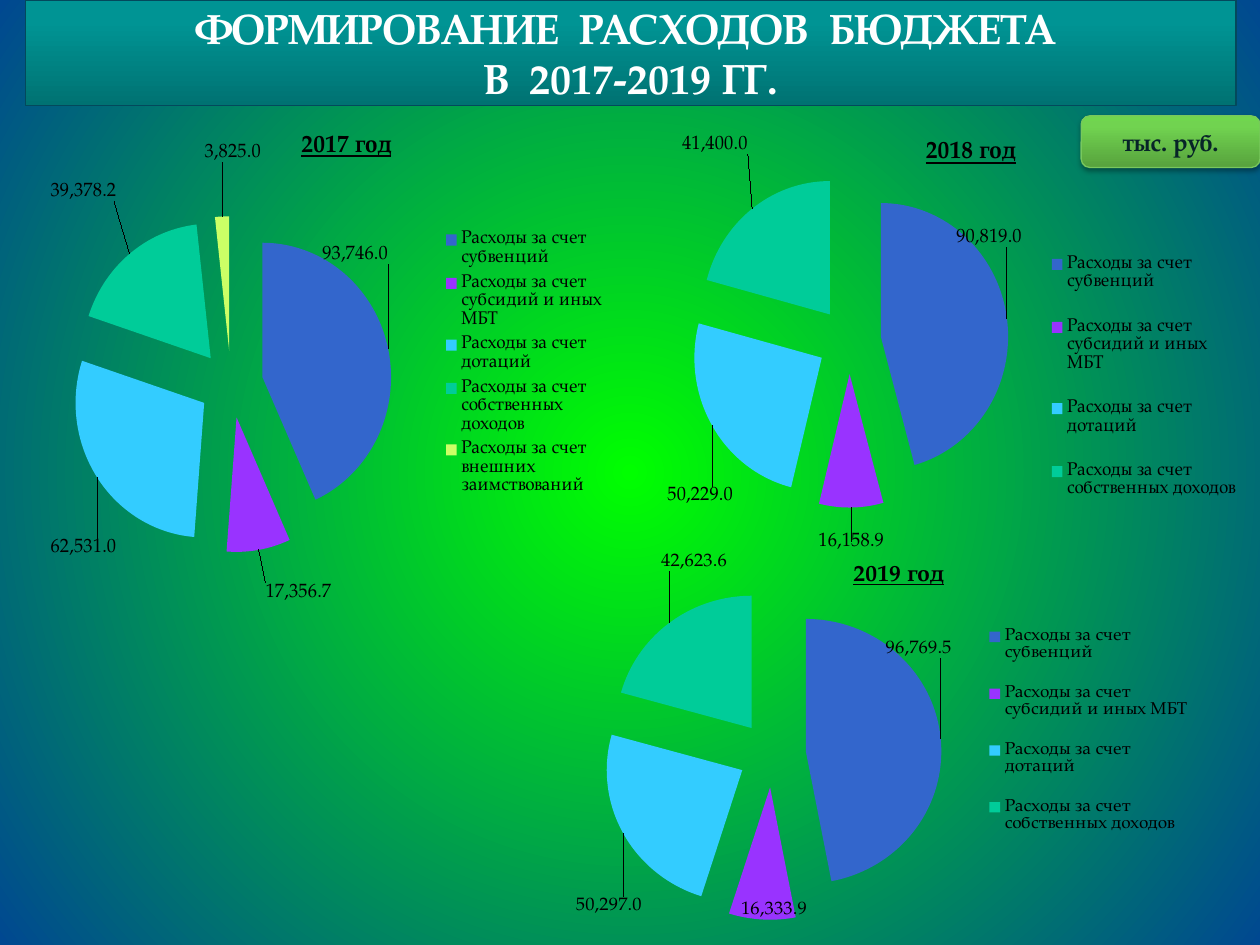
from dataclasses import dataclass

from lxml.etree import SubElement
from pptx import Presentation
from pptx.chart.data import CategoryChartData
from pptx.dml.color import RGBColor
from pptx.enum.chart import XL_CHART_TYPE, XL_LEGEND_POSITION
from pptx.enum.shapes import MSO_SHAPE
from pptx.enum.text import MSO_ANCHOR, PP_ALIGN
from pptx.oxml import parse_xml
from pptx.oxml.ns import nsdecls, qn
from pptx.util import Pt


@dataclass(frozen=True)
class Theme:
    font: str = "TeX Gyre Pagella"
    base_font: str = "Karla"
    black: str = "000000"
    white: str = "FFFFFF"
    badge_text: str = "072428"
    title_line: str = "03495C"
    badge_line: str = "78C85D"
    slices: tuple = ("3366CC", "9933FF", "33CCFF", "00CC99", "CCFF66")
    backdrop: tuple = ((0, "00FF00"), (100, "004891"))
    title_fill: tuple = ((0, "007272"), (80, "009494"), (100, "009595"))
    badge_fill: tuple = ((0, "57A23D"), (80, "71D350"), (100, "70D64E"))
    title_size: float = 24
    heading_size: float = 14
    label_size: float = 11
    legend_size: float = 10.5
    base_size: float = 18


@dataclass(frozen=True)
class Pie:
    """Box is in points; the layouts are fractions of the chart."""
    year: str
    box: tuple
    values: tuple
    plot: tuple
    heading: tuple
    legend: tuple
    label_shifts: tuple


THEME = Theme()
SOURCES = ("субвенций", "субсидий и иных МБТ", "дотаций",
           "собственных доходов", "внешних заимствований")
PIES = (
    Pie("2017 год", (14.4, 60.5, 334.8, 294.5),
        (93746, 17356.7, 62531, 39378.2, 3825),
        (0.035, 0.12, 0.574, 0.841), (0.44, 0.04), (0.7, 0.23, 0.29, 0.54),
        ((-0.13, -0.16), (0.01, 0.05), (0.03, 0.11), (-0.02, -0.09), (0.02, -0.09))),
    Pie("2018 год", (365.8, 66.2, 345.6, 249.1),
        (90819, 16158.9, 50229, 41400),
        (0.033, 0.134, 0.564, 0.765), (0.44, 0.04), (0.66, 0.26, 0.33, 0.68),
        ((-0.1, -0.16), (0, 0.06), (0.04, 0.13), (0, -0.11))),
    Pie("2019 год", (314.6, 309.6, 369.4, 230.4),
        (96769.5, 16333.9, 50297, 42623.6),
        (0, 0.125, 0.632, 0.875), (0.44, 0.04), (0.66, 0.17, 0.33, 0.66),
        ((-0.1, -0.21), (0.02, -0.05), (0.01, 0.16), (0.1, -0.12))),
)


def set_font(font, size: float, color: str, *, bold=False, underline=False,
             name: str = THEME.font) -> None:
    font.name, font.size, font.bold = name, Pt(size), bold
    font.underline = underline
    font.color.rgb = RGBColor.from_string(color)


def add_text(tf, text: str, **fmt) -> None:
    tf.word_wrap = True
    tf.vertical_anchor = MSO_ANCHOR.MIDDLE
    p = tf.paragraphs[0]
    p.text = text
    p.alignment = PP_ALIGN.CENTER
    for r in p.runs:
        set_font(r.font, **fmt)


def set_gradient(fill, parent, stops: tuple, direction: str) -> None:
    """Give the gradient its stops and a direction element."""
    fill.gradient()
    grad = next(parent.iter(qn("a:gradFill")))
    for child in list(grad):
        grad.remove(child)
    gs_list = SubElement(grad, qn("a:gsLst"))
    for pos, color in stops:
        gs = SubElement(gs_list, qn("a:gs"), pos=str(pos * 1000))
        SubElement(gs, qn("a:srgbClr"), val=color)
    grad.append(parse_xml(direction))


def style_panel(sp, stops: tuple, line: str) -> None:
    upward = f'<a:lin {nsdecls("a")} ang="16200000" scaled="0"/>'
    set_gradient(sp.fill, sp._element.spPr, stops, upward)
    sp.line.color.rgb = RGBColor.from_string(line)
    sp.line.width = Pt(0.75)


def layout_xml(box: tuple, inner: bool = False, edge: bool = True):
    """Manual chart layout; without edge, x and y are shifts."""
    parts = ['<c:layoutTarget val="inner"/>'] if inner else []
    if edge:
        parts += ['<c:xMode val="edge"/>', '<c:yMode val="edge"/>']
    parts += [f'<c:{tag} val="{value}"/>' for tag, value in zip("xywh", box)]
    return parse_xml(f'<c:layout {nsdecls("c")}><c:manualLayout>'
                     f'{"".join(parts)}</c:manualLayout></c:layout>')


def put_layout(parent, after: str, layout) -> None:
    for old in parent.findall(qn("c:layout")):
        parent.remove(old)
    if after:
        parent.find(qn(after)).addnext(layout)
    else:
        parent.insert(0, layout)


def add_labels(series, shifts: tuple) -> None:
    labels = series.data_labels
    labels.show_value = True
    labels.number_format, labels.number_format_is_linked = "#,##0.0", False
    set_font(labels.font, THEME.label_size, THEME.black)
    d_lbls = labels._element
    for i, shift in reversed(list(enumerate(shifts))):
        label = parse_xml(
            f'<c:dLbl {nsdecls("c")}><c:idx val="{i}"/><c:dLblPos val="bestFit"/>'
            '<c:showLegendKey val="0"/><c:showVal val="1"/><c:showCatName val="0"/>'
            '<c:showSerName val="0"/><c:showPercent val="0"/>'
            '<c:showBubbleSize val="0"/></c:dLbl>')
        put_layout(label, "c:idx", layout_xml(shift, edge=False))
        d_lbls.insert(0, label)
    for old in d_lbls.findall(qn("c:showLeaderLines")):
        d_lbls.remove(old)
    SubElement(d_lbls, qn("c:showLeaderLines"), val="1")


def add_pie(slide, pie: Pie) -> None:
    data = CategoryChartData(number_format="#,##0.0")
    data.categories = [f"Расходы за счет {s}" for s in SOURCES[:len(pie.values)]]
    data.add_series(pie.year, pie.values)
    chart = slide.shapes.add_chart(
        XL_CHART_TYPE.PIE, *map(Pt, pie.box), data).chart
    set_font(chart.font, THEME.base_size, THEME.white, name=THEME.base_font)

    chart.has_title = True
    r = chart.chart_title.text_frame.paragraphs[0].add_run()
    r.text = pie.year
    set_font(r.font, THEME.heading_size, THEME.black, bold=True, underline=True)
    put_layout(chart.chart_title._element, "c:tx", layout_xml(pie.heading))

    chart.has_legend = True
    legend = chart.legend
    legend.position = XL_LEGEND_POSITION.RIGHT
    legend.include_in_layout = False
    set_font(legend.font, THEME.legend_size, THEME.black)
    put_layout(legend._element, "c:legendPos", layout_xml(pie.legend))

    plot = chart.plots[0]
    plot.vary_by_categories = True
    put_layout(chart._chartSpace.chart.plotArea, "", layout_xml(pie.plot, inner=True))
    series = plot.series[0]
    for i, color in enumerate(THEME.slices[:len(pie.values)]):
        fill = series.points[i].format.fill
        fill.solid()
        fill.fore_color.rgb = RGBColor.from_string(color)
    add_labels(series, pie.label_shifts)
    explosion = parse_xml(f'<c:explosion {nsdecls("c")} val="25"/>')
    series._element.find(qn("c:dPt")).addprevious(explosion)


def add_title(slide) -> None:
    sp = slide.shapes.title
    sp.left, sp.top, sp.width, sp.height = map(Pt, (14.4, 0, 691.9, 60.5))
    sp._element.spPr.append(parse_xml(
        f'<a:prstGeom {nsdecls("a")} prst="round2DiagRect"><a:avLst>'
        '<a:gd name="adj1" fmla="val 0"/><a:gd name="adj2" fmla="val 0"/>'
        '</a:avLst></a:prstGeom>'))
    style_panel(sp, THEME.title_fill, THEME.title_line)
    tf = sp.text_frame
    tf.margin_left = tf.margin_right = Pt(3.6)
    tf.margin_top = tf.margin_bottom = 0
    add_text(tf, "ФОРМИРОВАНИЕ  РАСХОДОВ  БЮДЖЕТА \vВ  2017-2019 ГГ.",
             size=THEME.title_size, color=THEME.white, bold=True)


def add_unit_badge(slide) -> None:
    sp = slide.shapes.add_shape(
        MSO_SHAPE.ROUNDED_RECTANGLE, *map(Pt, (617.8, 66.2, 102.2, 29.5)))
    style_panel(sp, THEME.badge_fill, THEME.badge_line)
    sp._element.spPr.append(parse_xml(
        f'<a:effectLst {nsdecls("a")}><a:outerShdw blurRad="{Pt(3.1)}" '
        f'dist="{Pt(1.8)}" dir="5400000" rotWithShape="0"><a:srgbClr '
        f'val="{THEME.black}"><a:alpha val="35000"/></a:srgbClr>'
        '</a:outerShdw></a:effectLst>'))
    add_text(sp.text_frame, "тыс. руб.", size=THEME.heading_size,
             color=THEME.badge_text, bold=True)


def main() -> None:
    prs = Presentation()
    prs.slide_width, prs.slide_height = Pt(720), Pt(540)
    slide = prs.slides.add_slide(prs.slide_layouts[5])
    centre = (f'<a:path {nsdecls("a")} path="circle"><a:fillToRect '
              'l="50000" t="50000" r="50000" b="50000"/></a:path>')
    set_gradient(slide.background.fill, slide._element, THEME.backdrop, centre)
    for pie in PIES:
        add_pie(slide, pie)
    add_title(slide)
    add_unit_badge(slide)
    prs.save("out.pptx")


if __name__ == "__main__":
    main()
